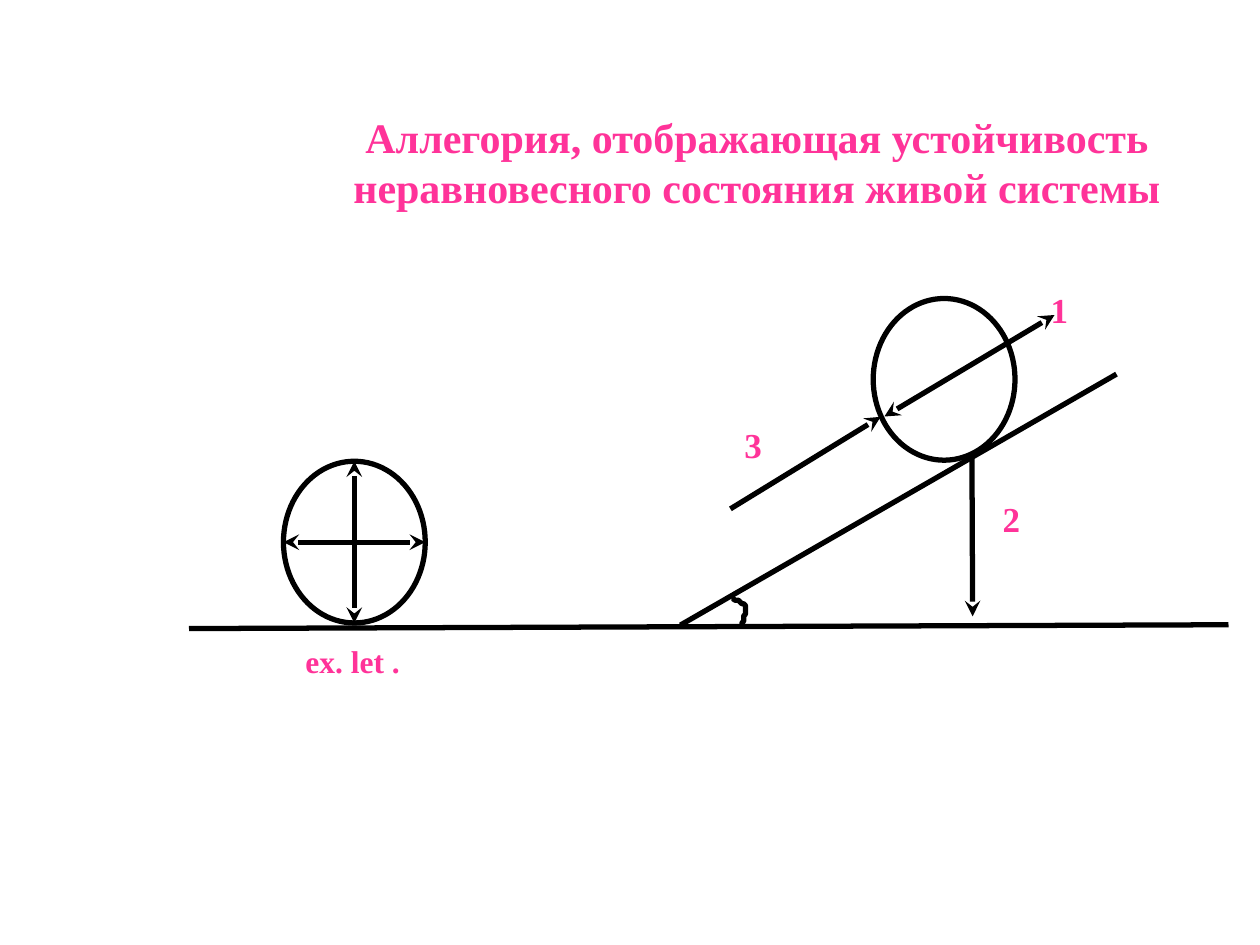
from dataclasses import dataclass

from lxml import etree
from pptx import Presentation
from pptx.dml.color import RGBColor
from pptx.enum import shapes, text
from pptx.oxml import ns
from pptx.util import Pt

FONT = "Times New Roman"
PINK = "FF3399"
BLACK = "000000"
STROKE = 3
BALL_WIDTH, BALL_HEIGHT = 81, 92.4


@dataclass(frozen=True)
class Ball:
    left: float
    top: float


@dataclass(frozen=True)
class Stroke:
    start: tuple[float, float]
    end: tuple[float, float]
    head: bool = False
    tail: bool = False


@dataclass(frozen=True)
class Label:
    words: str
    left: float
    top: float
    width: float = 40
    size: float = 20


RESTING = Ball(162, 263.6)
RAISED = Ball(499, 170.6)
MIDDLE_X = RESTING.left + BALL_WIDTH / 2
MIDDLE_Y = RESTING.top + BALL_HEIGHT / 2

STROKES = [
    Stroke((108, 359.2), (702, 357)),
    Stroke((388.8, 357.2), (638, 213.8)),
    Stroke((MIDDLE_X, RESTING.top), (MIDDLE_X, RESTING.top + BALL_HEIGHT), True, True),
    Stroke((RESTING.left, MIDDLE_Y), (RESTING.left + BALL_WIDTH, MIDDLE_Y), True, True),
    Stroke((417.4, 290.8), (503.2, 238.2), tail=True),
    Stroke((505.4, 238), (602.6, 180), True, True),
    Stroke((555.4, 260.6), (555.8, 352.2), tail=True),
]
LABELS = [
    Label("1", 593.3, 161.3),
    Label("2", 565.9, 280.8),
    Label("3", 418.3, 238.3),
    Label("ex. let .", 167.5, 363.5, 94, 18),
]
ANGLE_START = (418.3, 342)
ANGLE_CURVES = [
    ((419.8, 342.7), (425.5, 344.2), (426.3, 347)),
    ((427, 349.2), (424.1, 355), (424.1, 357.1)),
]


def color(value: str) -> RGBColor:
    return RGBColor.from_string(value)


def format_line(line) -> None:
    line.color.rgb = color(BLACK)
    line.width = Pt(STROKE)


def format_text(frame, words: str, size: float) -> None:
    frame.text = words
    frame.word_wrap = True
    frame.auto_size = text.MSO_AUTO_SIZE.NONE
    frame.vertical_anchor = text.MSO_ANCHOR.TOP
    for span in frame.paragraphs[0].runs:
        span.font.name = FONT
        span.font.size = Pt(size)
        span.font.bold = True
        span.font.color.rgb = color(PINK)


def draw_ball(page, ball: Ball) -> None:
    circle = page.shapes.add_shape(
        shapes.MSO_SHAPE.OVAL,
        Pt(ball.left), Pt(ball.top), Pt(BALL_WIDTH), Pt(BALL_HEIGHT),
    )
    circle.shadow.inherit = False
    circle.fill.background()
    format_line(circle.line)


def draw_stroke(page, stroke: Stroke) -> None:
    connector = page.shapes.add_connector(
        shapes.MSO_CONNECTOR.STRAIGHT,
        *(Pt(value) for value in stroke.start + stroke.end),
    )
    format_line(connector.line)
    outline = connector.line._get_or_add_ln()
    for tag, wanted in (("a:headEnd", stroke.head), ("a:tailEnd", stroke.tail)):
        if wanted:
            etree.SubElement(outline, ns.qn(tag), type="stealth")
    etree.SubElement(connector._element.spPr, ns.qn("a:effectLst"))


def draw_angle(page, steps: int = 12) -> None:
    points = [ANGLE_START]
    for first, second, end in ANGLE_CURVES:
        start = points[-1]
        for step in range(1, steps + 1):
            t = step / steps
            s = 1 - t
            points.append(tuple(
                s**3 * a + 3 * s * s * t * b + 3 * s * t * t * c + t**3 * d
                for a, b, c, d in zip(start, first, second, end)
            ))
    builder = page.shapes.build_freeform(*points[0], scale=Pt(1))
    builder.add_line_segments(points[1:], close=False)
    angle = builder.convert_to_shape()
    angle.shadow.inherit = False
    angle.fill.background()
    format_line(angle.line)


def draw_label(page, label: Label) -> None:
    box = page.shapes.add_textbox(
        Pt(label.left), Pt(label.top), Pt(label.width), Pt(46)
    )
    format_text(box.text_frame, label.words, label.size)


def draw_title(page) -> None:
    title = page.shapes.title
    title.left, title.top, title.width, title.height = (
        Pt(value) for value in (163, 60, 539, 65)
    )
    format_text(
        title.text_frame,
        "Аллегория, отображающая устойчивость неравновесного состояния живой системы",
        24,
    )
    para = title.text_frame.paragraphs[0]
    para.alignment = text.PP_ALIGN.CENTER
    para.space_before = Pt(12)


def main() -> None:
    deck = Presentation()
    deck.slide_width, deck.slide_height = Pt(720), Pt(540)
    page = deck.slides.add_slide(deck.slide_layouts[5])
    draw_title(page)
    for ball in (RESTING, RAISED):
        draw_ball(page, ball)
    for stroke in STROKES:
        draw_stroke(page, stroke)
    draw_angle(page)
    for label in LABELS:
        draw_label(page, label)
    deck.save("out.pptx")


if __name__ == "__main__":
    main()
